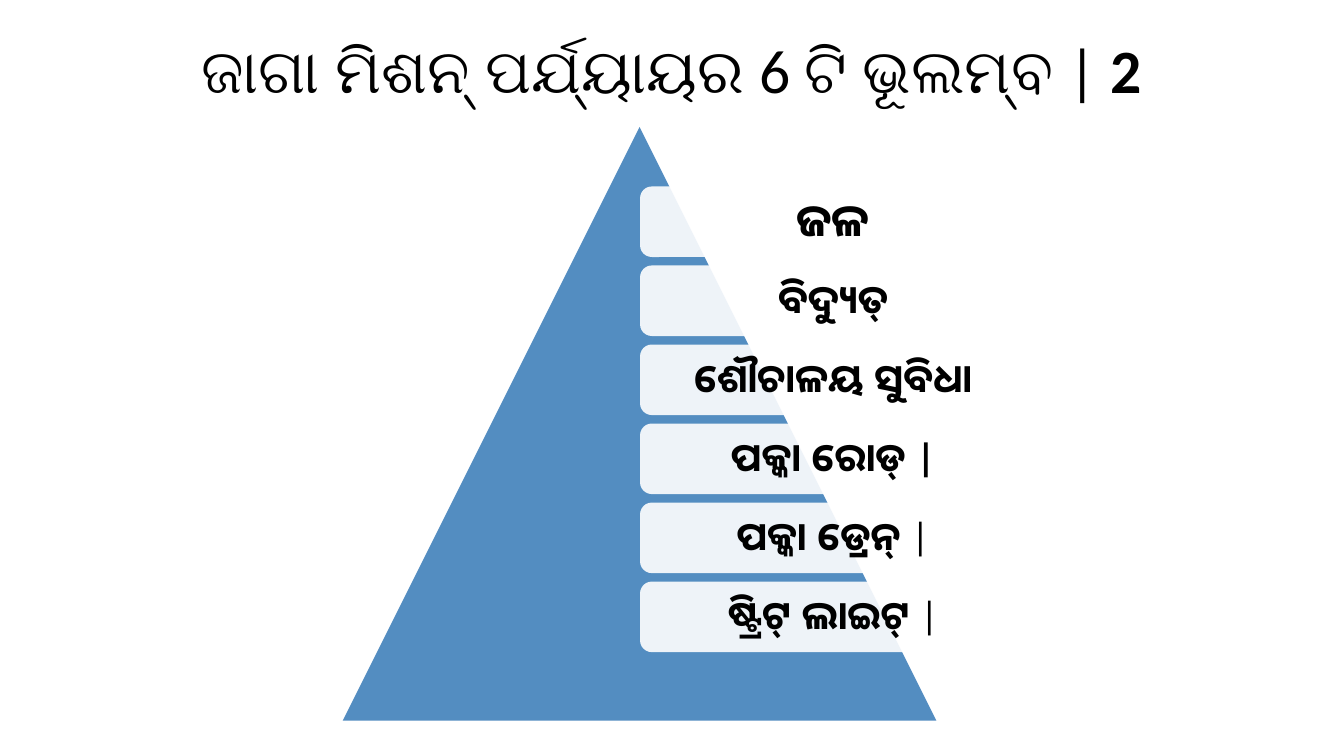
import pptx
import pptx.dml.color
import pptx.enum.shapes
import pptx.enum.text
import pptx.oxml
import pptx.oxml.ns
import pptx.util

Pt = pptx.util.Pt
SHAPES = pptx.enum.shapes.MSO_SHAPE
BLUE = pptx.dml.color.RGBColor(0x53, 0x8D, 0xC1)
WHITE = pptx.dml.color.RGBColor(0xFF, 0xFF, 0xFF)
BLACK = pptx.dml.color.RGBColor(0, 0, 0)

FACILITY_TOP, FACILITY_PITCH = 133.2, 56.45
# Each facility: font size, then runs of (text, bold)
FACILITIES = [
    (32, [("ଜଳ", True)]),
    (28, [("ବିଦ୍ୟୁତ୍", True)]),
    (28, [("ଶୌଚାଳୟ ସୁବିଧା", True)]),
    (28, [("ପକ୍କା ରୋଡ୍ |", True)]),
    (28, [("ପକ୍କା ଡ୍ରେନ୍ ", True), ("|", False)]),
    (28, [("ଷ୍ଟ୍ରିଟ୍ ଲାଇଟ୍ ", True), ("|", False)]),
]


def write_line(frame, size, runs):
    """Fill a text frame with one centred line of (text, bold) runs."""
    frame.word_wrap = True
    frame.vertical_anchor = pptx.enum.text.MSO_ANCHOR.MIDDLE
    line = frame.paragraphs[0]
    line.alignment = pptx.enum.text.PP_ALIGN.CENTER
    line.line_spacing = 0.9
    for text, bold in runs:
        run = line.add_run()
        run.text = text
        run.font.color.rgb = BLACK
        for name, value in {"name": "Calibri", "size": Pt(size), "bold": bold}.items():
            setattr(run.font, name, value)


def add_panel(kind, left, top, width, height, color):
    panel = slide.shapes.add_shape(kind, Pt(left), Pt(top), Pt(width), Pt(height))
    panel.shadow.inherit = False
    panel.fill.solid()
    panel.fill.fore_color.rgb = color
    panel.line.fill.background()
    return panel


deck = pptx.Presentation()
deck.slide_width, deck.slide_height = Pt(960), Pt(540)
slide = deck.slides.add_slide(deck.slide_layouts[5])

title = slide.shapes.title
title_place = {"left": 119.5, "top": 0, "width": 720.7, "height": 104.4}
for name, value in title_place.items():
    setattr(title, name, Pt(value))
title.text_frame.auto_size = pptx.enum.text.MSO_AUTO_SIZE.NONE
write_line(title.text_frame, 44, [("ଜାଗା ମିଶନ୍ ପର୍ଯ୍ୟାୟର 6 ଟି ଭୂଲମ୍ବ | ", False), ("2", True)])

add_panel(SHAPES.ISOSCELES_TRIANGLE, 244.8, 90.7, 424.1, 424.1, BLUE)

for index, (size, runs) in enumerate(FACILITIES):
    top = FACILITY_TOP + index * FACILITY_PITCH
    facility = add_panel(SHAPES.ROUNDED_RECTANGLE, 457.2, top, 275.8, 50.4, WHITE)
    white = facility.fill._xPr.find(".//" + pptx.oxml.ns.qn("a:srgbClr"))
    white.append(pptx.oxml.parse_xml(
        f'<a:alpha {pptx.oxml.ns.nsdecls("a")} val="90000"/>'))
    for side in ("left", "top", "right", "bottom"):
        setattr(facility.text_frame, f"margin_{side}", Pt(9))
    write_line(facility.text_frame, size, runs)

deck.save("out.pptx")
